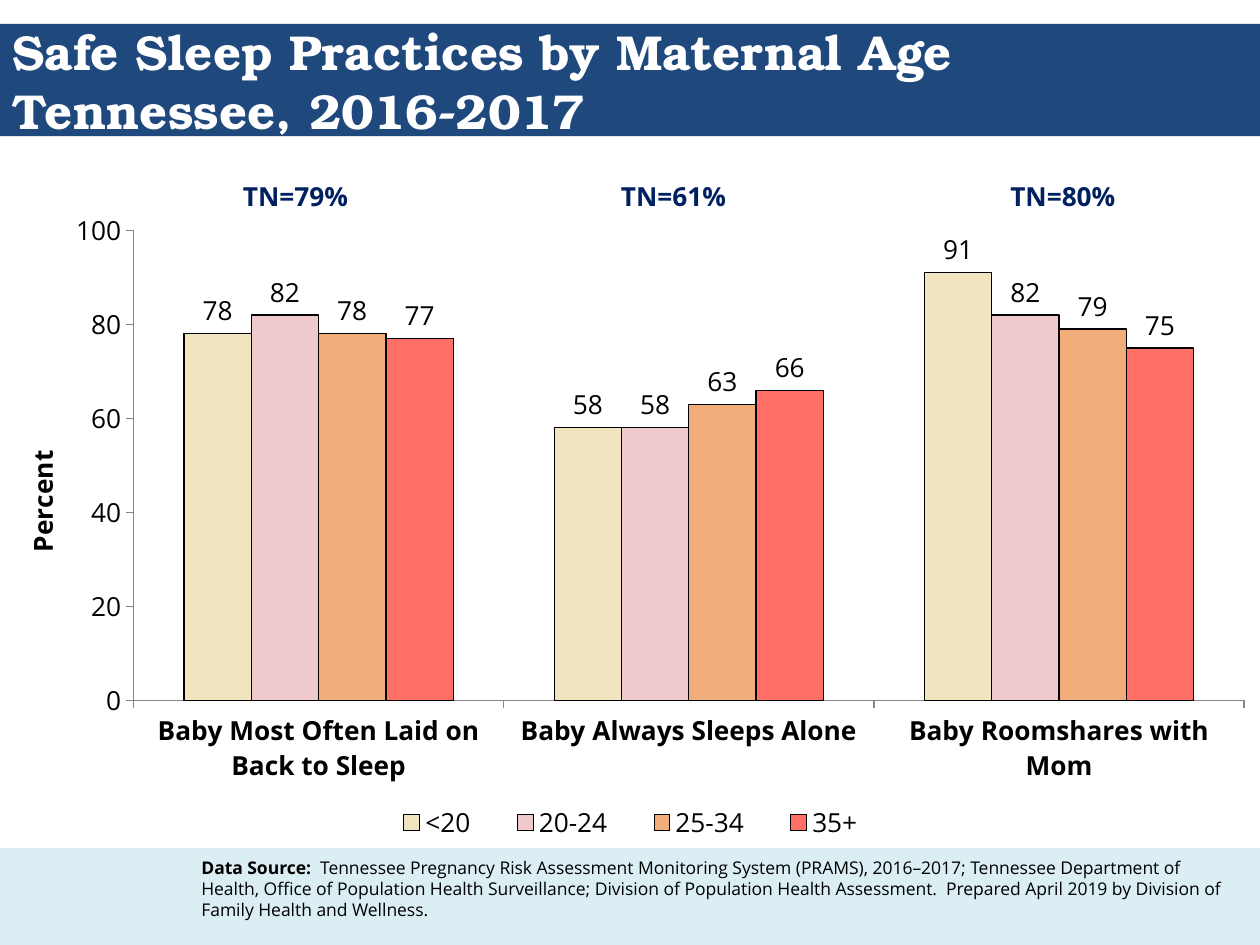
import pptx
import pptx.chart.data
import pptx.dml.color
import pptx.enum.chart
import pptx.enum.shapes
import pptx.enum.text
import pptx.oxml
import pptx.oxml.ns
import pptx.util
from pptx.util import Inches

COLORS = {
    "banner": "1F497D", "footer": "DBEEF4", "title": "FFFFFF",
    "average": "002060", "text": "000000", "axis": "868686",
}
BODY_FONT = "Open Sans"
TITLE_FONT = "TeX Gyre Bonum"

PRACTICES = ["Baby Most Often Laid on Back to Sleep",
             "Baby Always Sleeps Alone",
             "Baby Roomshares with Mom"]
AGE_GROUPS = [
    ("<20", (78, 58, 91), "F0E5BF"),
    ("20-24", (82, 58, 82), "EFC9CB"),
    ("25-34", (78, 63, 79), "F1AD7A"),
    ("35+", (77, 66, 75), "FF6F66"),
]
STATE_AVERAGES = [(1.83, "TN=79%"), (4.83, "TN=61%"), (7.92, "TN=80%")]
SOURCE = ("Tennessee Pregnancy Risk Assessment Monitoring System (PRAMS), "
          "2016–2017; Tennessee Department of Health, Office of Population "
          "Health Surveillance; Division of Population Health Assessment.  "
          "Prepared April 2019 by Division of Family Health and Wellness.")


def rgb(value):
    return pptx.dml.color.RGBColor.from_string(value)


def style_font(font, size, color=COLORS["text"], bold=False, name=BODY_FONT):
    font.size = pptx.util.Pt(size)
    font.color.rgb = rgb(color)
    font.bold = bold
    font.name = name


def add_band(slide, top, height, color):
    band = slide.shapes.add_shape(
        pptx.enum.shapes.MSO_SHAPE.RECTANGLE,
        0, Inches(top), Inches(10), Inches(height))
    band.shadow.inherit = False
    band.fill.solid()
    band.fill.fore_color.rgb = rgb(color)
    band.line.fill.background()


def add_text_frame(slide, left, top, width, height):
    frame = slide.shapes.add_textbox(
        Inches(left), Inches(top), Inches(width), Inches(height)).text_frame
    frame.word_wrap = True
    return frame


def add_title(slide):
    frame = add_text_frame(slide, 0, 0.19, 10, 0.9)
    frame.vertical_anchor = pptx.enum.text.MSO_ANCHOR.MIDDLE
    heading = frame.paragraphs[0]
    heading.add_run().text = "Safe Sleep Practices by Maternal Age"
    heading.add_line_break()
    heading.add_run().text = "Tennessee, 2016-2017"
    style_font(heading.font, 28, COLORS["title"], True, TITLE_FONT)


def add_average(slide, left, text):
    average = add_text_frame(slide, left, 1.38, 1.25, 0.35).paragraphs[0]
    average.text = text
    style_font(average.font, 15, COLORS["average"], True)


def add_source(slide):
    note = add_text_frame(slide, 1.5, 6.75, 8.33, 0.61).paragraphs[0]
    for text, bold in (("Data Source:  ", True), (SOURCE, False)):
        run = note.add_run()
        run.text = text
        style_font(run.font, 10, bold=bold)


def place(element, index, x, y, w=None, h=None, inner=False):
    """Give a chart part a manual layout, in fractions of the chart."""
    for old in element.findall(pptx.oxml.ns.qn("c:layout")):
        element.remove(old)
    settings = [("layoutTarget", "inner")] if inner else []
    settings += [("xMode", "edge"), ("yMode", "edge"), ("x", x), ("y", y)]
    if w is not None:
        settings += [("w", w), ("h", h)]
    body = "".join(f'<c:{tag} val="{value}"/>' for tag, value in settings)
    element.insert(index, pptx.oxml.parse_xml(
        f'<c:layout {pptx.oxml.ns.nsdecls("c")}>'
        f'<c:manualLayout>{body}</c:manualLayout></c:layout>'))


def style_axis(axis, bold=False):
    axis.has_major_gridlines = False
    axis.major_tick_mark = pptx.enum.chart.XL_TICK_MARK.OUTSIDE
    axis.minor_tick_mark = pptx.enum.chart.XL_TICK_MARK.NONE
    axis.format.line.color.rgb = rgb(COLORS["axis"])
    style_font(axis.tick_labels.font, 15, bold=bold)


def style_series(series, color):
    series.format.fill.solid()
    series.format.fill.fore_color.rgb = rgb(color)
    series.format.line.color.rgb = rgb(COLORS["text"])
    series.format.line.width = pptx.util.Pt(0.75)
    labels = series.data_labels
    labels.show_value = True
    labels.number_format = "#,##0"
    labels.number_format_is_linked = False
    labels.position = pptx.enum.chart.XL_LABEL_POSITION.OUTSIDE_END
    style_font(labels.font, 15)


def add_practice_chart(slide):
    data = pptx.chart.data.CategoryChartData()
    data.categories = PRACTICES
    for age, percents, _ in AGE_GROUPS:
        data.add_series(age, percents)
    chart = slide.shapes.add_chart(
        pptx.enum.chart.XL_CHART_TYPE.COLUMN_CLUSTERED,
        Inches(-0.17), Inches(1.57), Inches(10.25), Inches(5.18), data).chart
    chart.has_title = False
    style_font(chart.font, 10, name="Calibri")

    # Columns
    plot = chart.plots[0]
    plot.vary_by_categories = False
    plot.gap_width = 150
    plot.overlap = 0
    for series, (_, _, color) in zip(plot.series, AGE_GROUPS):
        style_series(series, color)
    plot_area = chart.element.find(".//" + pptx.oxml.ns.qn("c:plotArea"))
    place(plot_area, 0, 0.12, 0.05, 0.86, 0.72, inner=True)

    # Axes
    style_axis(chart.category_axis, bold=True)
    percent_axis = chart.value_axis
    style_axis(percent_axis)
    percent_axis.minimum_scale = 0
    percent_axis.maximum_scale = 100
    percent_axis.major_unit = 20
    percent_axis.tick_labels.number_format = "0"
    percent_axis.tick_labels.number_format_is_linked = False
    axis_title = percent_axis.axis_title
    percent_label = axis_title.text_frame.paragraphs[0]
    percent_label.text = "Percent"
    style_font(percent_label.font, 15, bold=True)
    place(axis_title._element, 1, 0.03, 0.38)

    # Legend
    chart.has_legend = True
    legend = chart.legend
    legend.position = pptx.enum.chart.XL_LEGEND_POSITION.BOTTOM
    legend.include_in_layout = False
    style_font(legend.font, 15)
    place(legend._element, 1, 0.3, 0.93, 0.41, 0.06)


def main():
    deck = pptx.Presentation()
    deck.slide_width, deck.slide_height = Inches(10), Inches(7.5)
    slide = deck.slides.add_slide(deck.slide_layouts[6])

    # Banner and footer bands
    add_band(slide, 0.19, 0.89, COLORS["banner"])
    add_band(slide, 6.73, 0.77, COLORS["footer"])

    # Content
    add_title(slide)
    add_practice_chart(slide)
    for left, text in STATE_AVERAGES:
        add_average(slide, left, text)
    add_source(slide)

    deck.save("out.pptx")


if __name__ == "__main__":
    main()
